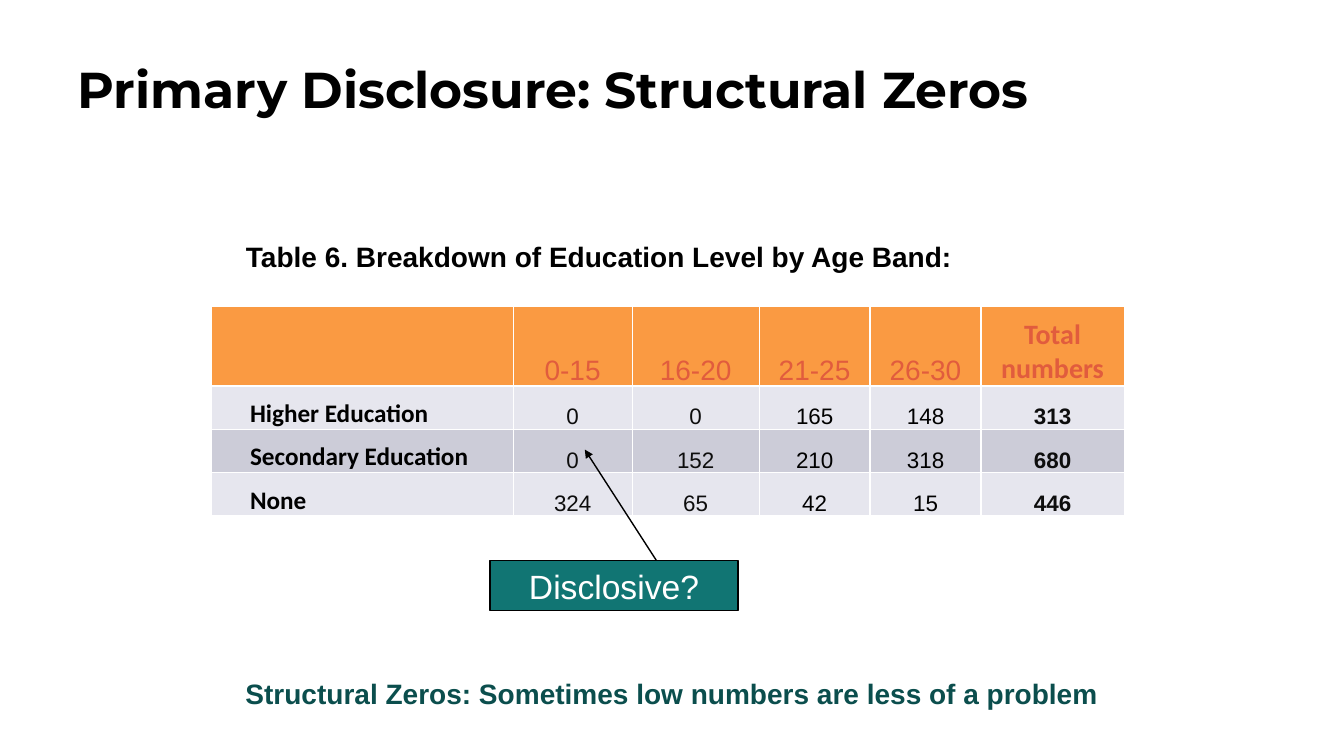
import pptx
import pptx.dml.color
import pptx.enum.shapes
import pptx.enum.text
import pptx.oxml
import pptx.oxml.ns
import pptx.util

TITLE = "Primary Disclosure: Structural Zeros"
CAPTION = "Table 6. Breakdown of Education Level by Age Band:"
CALLOUT = "Disclosive?"
CONCLUSION = "Structural Zeros: Sometimes low numbers are less of a problem"
EDUCATION_BY_AGE = [
    ["", "0-15", "16-20", "21-25", "26-30", "Total numbers"],
    ["Higher Education", "0", "0", "165", "148", "313"],
    ["Secondary Education", "0", "152", "210", "318", "680"],
    ["None", "324", "65", "42", "15", "446"],
]
COLUMN_WIDTHS = [299, 118, 126, 110, 110, 142]
ROW_HEIGHTS = [79, 43, 43, 43]
COLORS = {
    "black": "000000", "white": "FFFFFF", "near_black": "0D0D0D",
    "header": "FA9A42", "header_text": "E15C3D",
    "light_band": "E6E6EE", "dark_band": "CCCCD8",
    "teal": "117573", "dark_teal": "0B4E4D",
}
PX = 9144
ALIGN = pptx.enum.text.PP_ALIGN
ANCHOR = pptx.enum.text.MSO_ANCHOR


def px(*lengths):
    return [pptx.util.Emu(length * PX) for length in lengths]


def rgb(name):
    return pptx.dml.color.RGBColor.from_string(COLORS[name])


def write(frame, text, size, color, font="Arial", bold=False, align=ALIGN.LEFT):
    frame.word_wrap = True
    paragraph = frame.paragraphs[0]
    paragraph.alignment = align
    run = paragraph.add_run()
    run.text = text
    run.font.name = font
    run.font.size = pptx.util.Pt(size)
    run.font.bold = bold
    run.font.color.rgb = rgb(color)
    return paragraph


def add_text(slide, box, *content, **style):
    return write(slide.shapes.add_textbox(*px(*box)).text_frame, *content, **style)


def set_borders(cell):
    properties = cell._tc.get_or_add_tcPr()
    for position, side in enumerate(("lnL", "lnR", "lnT", "lnB")):
        properties.insert(position, pptx.oxml.parse_xml(
            f'<a:{side} {pptx.oxml.ns.nsdecls("a")} w="12700"><a:solidFill>'
            f'<a:srgbClr val="{COLORS["white"]}"/></a:solidFill></a:{side}>'))


def cell_style(row, column):
    last = column == len(COLUMN_WIDTHS) - 1
    if row == 0:
        return dict(size=20, color="header_text", font="Calibri" if last else "Arial",
                    bold=last, align=ALIGN.CENTER)
    if column == 0:
        return dict(size=18, color="black", font="Calibri", bold=True)
    color = "black" if column in (3, 4) else "near_black"
    return dict(size=16, color=color, bold=last, align=ALIGN.CENTER)


def add_education_table(slide, left, top):
    table = slide.shapes.add_table(
        len(ROW_HEIGHTS), len(COLUMN_WIDTHS),
        *px(left, top, sum(COLUMN_WIDTHS), sum(ROW_HEIGHTS))).table
    for column, width in zip(table.columns, COLUMN_WIDTHS):
        column.width = px(width)[0]
    for row, height in zip(table.rows, ROW_HEIGHTS):
        row.height = px(height)[0]
    for r, values in enumerate(EDUCATION_BY_AGE):
        fill = "header" if r == 0 else "light_band" if r % 2 else "dark_band"
        for c, value in enumerate(values):
            cell = table.cell(r, c)
            cell.fill.solid()
            cell.fill.fore_color.rgb = rgb(fill)
            cell.vertical_anchor = ANCHOR.BOTTOM
            indent = 38 if r and c == 0 else 1
            (cell.margin_left, cell.margin_top,
             cell.margin_right, cell.margin_bottom) = px(indent, 1, 1, 0)
            set_borders(cell)
            if value:
                write(cell.text_frame, value, **cell_style(r, c))


def add_callout(slide, box, start, end):
    shape = slide.shapes.add_shape(pptx.enum.shapes.MSO_SHAPE.RECTANGLE, *px(*box))
    shape.shadow.inherit = False
    shape.fill.solid()
    shape.fill.fore_color.rgb = rgb("teal")
    shape.text_frame.vertical_anchor = ANCHOR.MIDDLE
    write(shape.text_frame, CALLOUT, 24, "white", align=ALIGN.CENTER)
    arrow = slide.shapes.add_connector(
        pptx.enum.shapes.MSO_CONNECTOR.STRAIGHT, *px(*start, *end))
    for outlined in (shape, arrow):
        outlined.line.color.rgb = rgb("black")
        outlined.line.width = pptx.util.Pt(1)
    namespace = pptx.oxml.ns.nsdecls("a")
    arrow.line._get_or_add_ln().append(
        pptx.oxml.parse_xml(f'<a:tailEnd {namespace} type="triangle"/>'))
    arrow._element.spPr.append(pptx.oxml.parse_xml(f"<a:effectLst {namespace}/>"))


def main():
    presentation = pptx.Presentation()
    presentation.slide_width, presentation.slide_height = px(1333, 750)
    slide = presentation.slides.add_slide(presentation.slide_layouts[6])
    title = add_text(slide, (67, 60, 1165, 124), TITLE, 36, "black",
                     font="Montserrat", bold=True)
    title.line_spacing = 0.9
    add_text(slide, (234, 233, 819, 44), CAPTION, 20, "black", bold=True)
    add_education_table(slide, 210, 304)
    add_callout(slide, (486, 556, 246, 50), (651, 556), (580, 446))
    add_text(slide, (210, 666, 913, 44), CONCLUSION, 20, "dark_teal",
             bold=True, align=ALIGN.CENTER)
    presentation.save("out.pptx")


if __name__ == "__main__":
    main()
